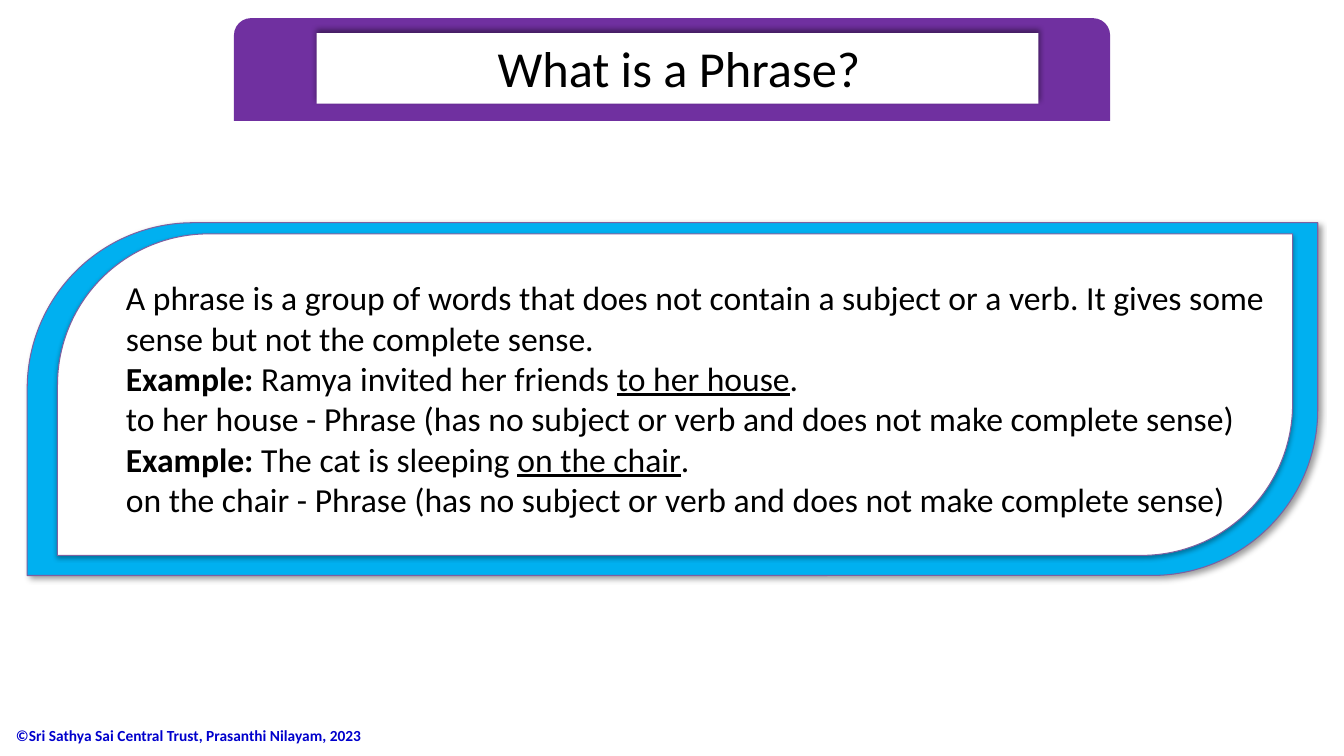
from dataclasses import dataclass

from lxml import etree
from pptx import Presentation
from pptx import util as u
from pptx.dml.color import RGBColor
from pptx.enum import shapes, text
from pptx.oxml import ns


@dataclass(frozen=True)
class Theme:
    """Colours, font and type sizes of the slide."""
    font: str = "Calibri"
    ink: str = "000000"
    paper: str = "FFFFFF"
    purple: str = "7030A0"
    blue: str = "00B0F0"
    edge: str = "7D60A0"
    navy: str = "0000CC"
    title: int = 36
    body: int = 24
    note: int = 11


THEME = Theme()
KIND = shapes.MSO_SHAPE
LINES = [
    [("A phrase is a group of words that does not contain a subject or a verb. "
      "It gives some sense but not the complete sense.", "")],
    [("Example:", "b"), (" Ramya invited her friends ", ""),
     ("to her house", "u"), (".", "")],
    [("to her house - Phrase (has no subject or verb and does not make "
      "complete sense)", "")],
    [("Example:", "b"), (" The cat is sleeping ", ""),
     ("on the chair", "u"), (".", "")],
    [("on the chair - Phrase (has no subject or verb and does not make "
      "complete sense)", "")],
]


def shade(shape, alpha, blur, dist, angle):
    """Give a shape a soft outer shadow."""
    fx = shape._element.spPr.find(ns.qn("a:effectLst"))
    cast = etree.SubElement(
        fx, ns.qn("a:outerShdw"), blurRad=str(u.Pt(blur)),
        dist=str(u.Pt(dist)), dir=str(angle * 60000), rotWithShape="0")
    tint = etree.SubElement(cast, ns.qn("a:srgbClr"), val=THEME.ink)
    etree.SubElement(tint, ns.qn("a:alpha"), val=str(alpha * 1000))


def panel(slide, kind, box, fill, edge=None, shadow=None, adj=()):
    """Draw a filled shape with optional edge, shadow and corner sizes."""
    shape = slide.shapes.add_shape(kind, *map(u.Inches, box))
    shape.shadow.inherit = False
    shape.fill.solid()
    shape.fill.fore_color.rgb = RGBColor.from_string(fill)
    if edge:
        shape.line.color.rgb = RGBColor.from_string(edge)
        shape.line.width = u.Pt(0.75)
    else:
        shape.line.fill.background()
    for i, size in enumerate(adj):
        shape.adjustments[i] = size
    if shadow:
        shade(shape, *shadow)


def write(slide, box, lines, size, color, align=text.PP_ALIGN.LEFT,
          anchor=text.MSO_ANCHOR.TOP):
    """Write lines of runs, each marked b for bold or u for underline."""
    frame = slide.shapes.add_textbox(*map(u.Inches, box)).text_frame
    frame.word_wrap = True
    frame.vertical_anchor = anchor
    for i, line in enumerate(lines):
        para = frame.add_paragraph() if i else frame.paragraphs[0]
        para.alignment = align
        for words, mark in line:
            run = para.add_run()
            run.text = words
            font = run.font
            font.name = THEME.font
            font.size = u.Pt(size)
            font.color.rgb = RGBColor.from_string(color)
            font.bold = mark == "b"
            font.underline = mark == "u"


def header(slide, x, y, w, h):
    """Place the title in a white plate on a purple tab."""
    panel(slide, KIND.ROUND_2_SAME_RECTANGLE, (x, y, w, h), THEME.purple)
    panel(slide, KIND.RECTANGLE, (x + 0.82, y + 0.15, w - 1.53, h - 0.32),
          THEME.paper, shadow=(40, 4, 3, 270))
    write(slide, (x + 0.78, y + 0.14, w - 1.42, h - 0.31),
          [[("What is a Phrase?", "")]], THEME.title, THEME.ink,
          text.PP_ALIGN.CENTER)


def card(slide, x, y, w, h):
    """Place the definition and examples in a blue leaf frame."""
    leaf = KIND.ROUND_2_DIAG_RECTANGLE
    adj = (0.47, 0)
    panel(slide, leaf, (x, y, w, h), THEME.blue, THEME.edge,
          (40, 4, 3, 45), adj)
    panel(slide, leaf, (x + 0.3, y + 0.11, w - 0.55, h - 0.31), THEME.paper,
          THEME.edge, (35, 3.1, 1.8, 90), adj)
    write(slide, (x + 0.88, y + 0.49, w - 1.3, h - 1.02), LINES,
          THEME.body, THEME.ink)


def footer(slide, x, y, w, h):
    """Place the copyright line."""
    write(slide, (x, y, w, h),
          [[("©Sri Sathya Sai Central Trust, Prasanthi Nilayam, 2023", "b")]],
          THEME.note, THEME.navy, anchor=text.MSO_ANCHOR.MIDDLE)


def main():
    """Build and save the slide."""
    deck = Presentation()
    deck.slide_width = u.Inches(13.33)
    deck.slide_height = u.Inches(7.5)
    slide = deck.slides.add_slide(deck.slide_layouts[6])
    footer(slide, 0.06, 7.09, 3.81, 0.41)
    header(slide, 2.32, 0.18, 8.69, 1.02)
    card(slide, 0.27, 2.21, 12.8, 3.5)
    deck.save("out.pptx")


if __name__ == "__main__":
    main()
